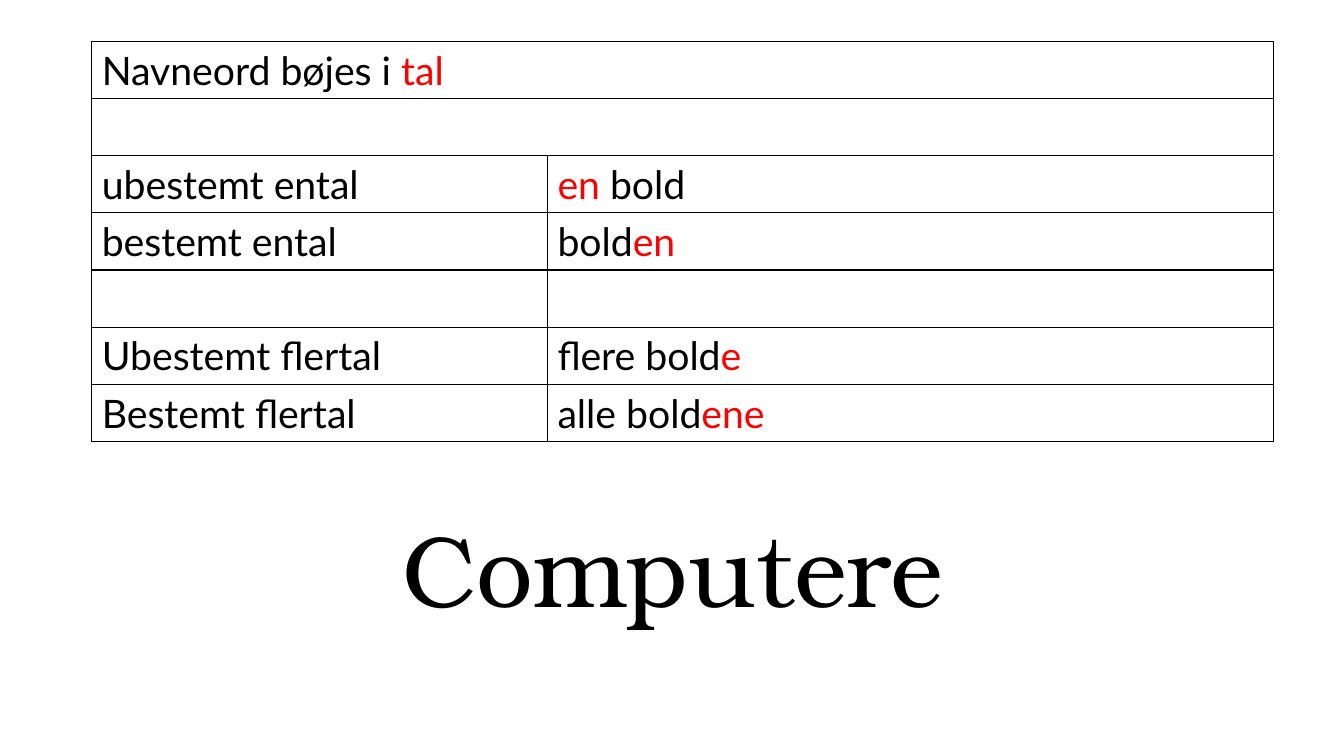
"""Build a slide on how Danish nouns are inflected in number."""
from lxml.etree import SubElement as Sub
from pptx import Presentation
from pptx.dml.color import RGBColor as Rgb
from pptx.enum.text import MSO_ANCHOR as Anchor, MSO_AUTO_SIZE as Auto, PP_ALIGN as Align
from pptx.oxml.ns import qn
from pptx.util import Inches, Pt

HUES = {"ink": "000000", "mark": "FF0000"}
ROWS = [
    [[("Navneord bøjes i", "ink"), (" tal", "mark")]],
    [[]],
    [[("ubestemt ental", "ink")], [("en", "mark"), (" bold", "ink")]],
    [[("bestemt ental", "ink")], [("bold", "ink"), ("en", "mark")]],
    [[], []],
    [[("Ubestemt flertal", "ink")], [("flere bold", "ink"), ("e", "mark")]],
    [[("Bestemt flertal", "ink")], [("alle bold", "ink"), ("ene", "mark")]],
]
WORD = [("Computere", "ink")]
COLS = [4.52, 7.2]
GRID = (0.91, 0.41, sum(COLS), 3.97)
BODY = (0.92, 4.64, 11.5, 2.12)


def write(frame, parts, size=28, face="Lato", align=Align.LEFT, space=1.0):
    para = frame.paragraphs[0]
    para.alignment, para.line_spacing = align, space
    para.space_before = Pt(0)
    for text, hue in parts:
        run = para.add_run()
        run.text = text
        font = run.font
        font.size, font.name, font.bold = Pt(size), face, False
        font.color.rgb = Rgb.from_string(HUES[hue])


def frame_cell(cell):
    props = cell._tc.get_or_add_tcPr()
    for side in ("lnL", "lnR", "lnT", "lnB"):
        line = Sub(props, qn(f"a:{side}"), w=str(Pt(1)))
        fill = Sub(line, qn("a:solidFill"))
        Sub(fill, qn("a:srgbClr"), val=HUES["ink"])
    cell.fill.background()


def add_grid(slide):
    table = slide.shapes.add_table(len(ROWS), len(COLS), *map(Inches, GRID)).table
    table.first_row = table.horz_banding = False
    for col, width in zip(table.columns, COLS):
        col.width = Inches(width)
    for row in table.rows:
        row.height = Inches(GRID[3] / len(ROWS))
    for cell in table.iter_cells():
        frame_cell(cell)
    for r, row in enumerate(ROWS):
        if len(row) < len(COLS):
            table.cell(r, 0).merge(table.cell(r, len(COLS) - 1))
        for c, parts in enumerate(row):
            write(table.cell(r, c).text_frame, parts)


def add_word(slide):
    body = slide.placeholders[1]
    body.left, body.top, body.width, body.height = map(Inches, BODY)
    frame = body.text_frame
    frame.auto_size, frame.vertical_anchor = Auto.NONE, Anchor.MIDDLE
    props = frame.paragraphs[0]._p.get_or_add_pPr()
    props.set("marL", "0")
    props.set("indent", "0")
    Sub(props, qn("a:buNone"))
    write(frame, WORD, size=72, face="TeX Gyre Bonum", align=Align.CENTER, space=0.9)


def main():
    deck = Presentation()
    deck.slide_width, deck.slide_height = Inches(13.33), Inches(7.5)
    slide = deck.slides.add_slide(deck.slide_layouts[1])
    title = slide.shapes.title.element
    title.getparent().remove(title)
    add_word(slide)
    add_grid(slide)
    deck.save("out.pptx")


if __name__ == "__main__":
    main()
